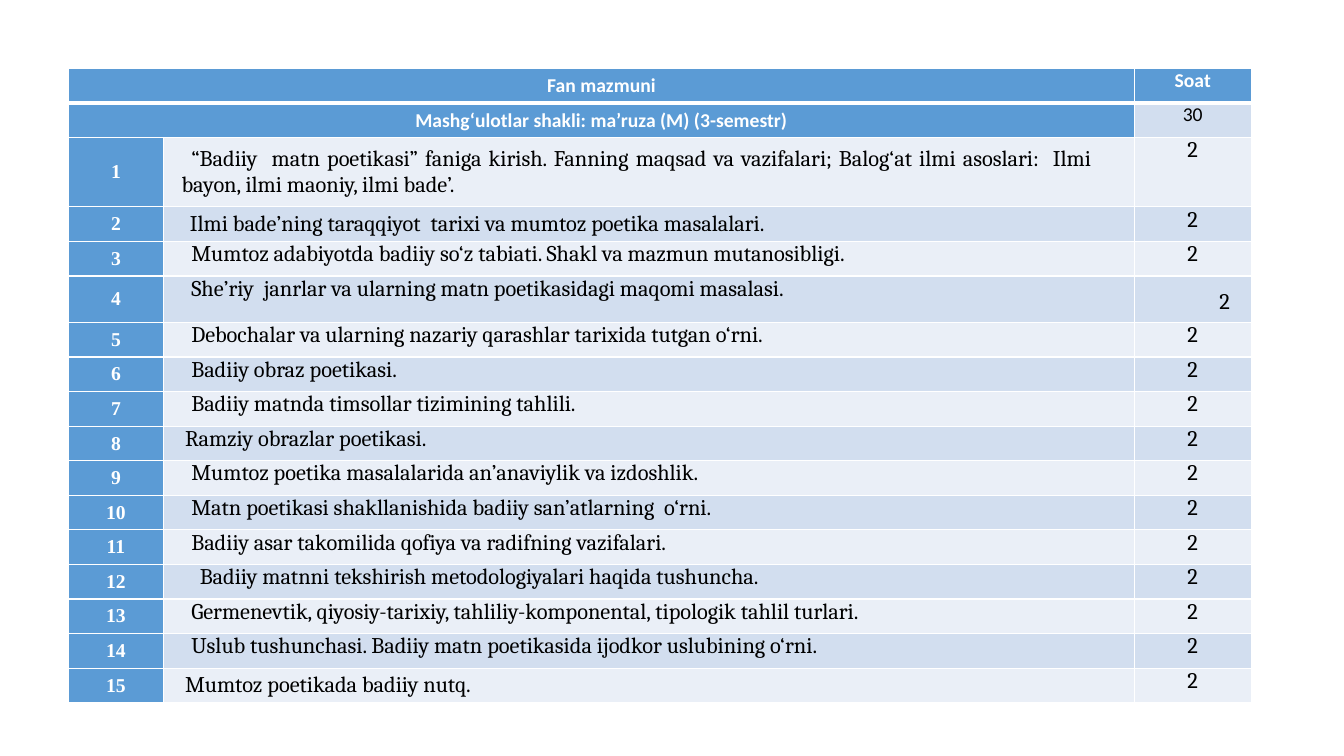
from dataclasses import dataclass

from lxml import etree
from pptx import Presentation
from pptx.dml.color import RGBColor
from pptx.enum.text import MSO_ANCHOR, PP_ALIGN
from pptx.oxml.ns import qn
from pptx.util import Pt

LEFT, CENTER, JUSTIFY = PP_ALIGN.LEFT, PP_ALIGN.CENTER, PP_ALIGN.JUSTIFY
TOP, MIDDLE = MSO_ANCHOR.TOP, MSO_ANCHOR.MIDDLE


@dataclass(frozen=True)
class Theme:
    accent: str = "5B9BD5"
    band_dark: str = "D2DEEF"
    band_light: str = "EAEFF7"
    white: str = "FFFFFF"
    black: str = "000000"
    heading_font: str = "Calibri"
    number_font: str = "Times New Roman"
    body_font: str = "Cambria"
    small: int = 14
    large: int = 16


THEME = Theme()
COLUMN_WIDTHS = (67.7, 693.6, 83.4)
ROW_HEIGHT = 24.7
TALL_ROWS = {1: 49.4, 4: 33.2}
HEADING_ROWS = 2
HANGING = (8, 7)
LECTURES = (
    ("“Badiiy  matn poetikasi” faniga kirish. Fanning maqsad va vazifalari; "
     "Balog‘at ilmi asoslari:  Ilmi  bayon, ilmi maoniy, ilmi bade’.", HANGING, JUSTIFY, MIDDLE),
    ("Ilmi bade’ning taraqqiyot  tarixi va mumtoz poetika masalalari.", (0, 14), LEFT, MIDDLE),
    ("Mumtoz adabiyotda badiiy so‘z tabiati. Shakl va mazmun mutanosibligi.", HANGING, JUSTIFY, TOP),
    ("She’riy  janrlar va ularning matn poetikasidagi maqomi masalasi.", HANGING, JUSTIFY, TOP),
    ("Debochalar va ularning nazariy qarashlar tarixida tutgan o‘rni.", HANGING, JUSTIFY, TOP),
    ("Badiiy obraz poetikasi.", HANGING, JUSTIFY, TOP),
    ("Badiiy matnda timsollar tizimining tahlili.", HANGING, JUSTIFY, TOP),
    ("Ramziy obrazlar poetikasi.", (0, 10.5), JUSTIFY, TOP),
    ("Mumtoz poetika masalalarida an’anaviylik va izdoshlik.", HANGING, JUSTIFY, TOP),
    ("Matn poetikasi shakllanishida badiiy san’atlarning  o‘rni.", HANGING, JUSTIFY, TOP),
    ("Badiiy asar takomilida qofiya va radifning vazifalari.", HANGING, JUSTIFY, TOP),
    ("Badiiy matnni tekshirish metodologiyalari haqida tushuncha.", (0, 21), LEFT, TOP),
    ("Germenevtik, qiyosiy-tarixiy, tahliliy-komponental, tipologik tahlil turlari.",
     HANGING, JUSTIFY, TOP),
    ("Uslub tushunchasi. Badiiy matn poetikasida ijodkor uslubining o‘rni.", HANGING, JUSTIFY, TOP),
    ("Mumtoz poetikada badiiy nutq.", (0, 10.5), LEFT, MIDDLE),
)


def add_borders(cell, bottom=1):
    properties = cell._tc.get_or_add_tcPr()
    for side, width in (("L", 1), ("R", 1), ("T", 1), ("B", bottom)):
        line = etree.SubElement(properties, qn(f"a:ln{side}"), w=str(Pt(width)))
        fill = etree.SubElement(line, qn("a:solidFill"))
        etree.SubElement(fill, qn("a:srgbClr"), val=THEME.white)


def set_indent(paragraph, left, first, right=0):
    properties = paragraph._p.get_or_add_pPr()
    for name, length in (("marL", left), ("marR", right), ("indent", first)):
        properties.set(name, str(Pt(length)))


def style_cell(cell, fill, bottom=1):
    add_borders(cell, bottom)
    cell.fill.solid()
    cell.fill.fore_color.rgb = RGBColor.from_string(fill)
    cell.margin_left = cell.margin_right = Pt(5)
    cell.margin_top = cell.margin_bottom = Pt(0)


def write_cell(cell, text, font, size, color, bold=False, align=CENTER, anchor=TOP):
    cell.vertical_anchor = anchor
    paragraph = cell.text_frame.paragraphs[0]
    paragraph.text = text
    paragraph.alignment = align
    paragraph.font.name = font
    paragraph.font.size = Pt(size)
    paragraph.font.bold = bold
    paragraph.font.color.rgb = RGBColor.from_string(color)
    return paragraph


def write_heading(cell, text, anchor=MIDDLE):
    write_cell(cell, text, THEME.heading_font, THEME.small, THEME.white, True, anchor=anchor)


def add_headings(table):
    for row, bottom, hours_fill in ((0, 3, THEME.accent), (1, 1, THEME.band_dark)):
        for column, fill in enumerate((THEME.accent, THEME.accent, hours_fill)):
            style_cell(table.cell(row, column), fill, bottom)
        table.cell(row, 0).merge(table.cell(row, 1))
    write_heading(table.cell(0, 0), "Fan mazmuni")
    write_heading(table.cell(0, 2), "Soat", TOP)
    write_heading(table.cell(1, 0), "Mashg‘ulotlar shakli: ma’ruza (M) (3-semestr)")
    write_cell(table.cell(1, 2), "30", THEME.heading_font, THEME.small, THEME.black)


def add_lecture(table, number, topic, indent, align, anchor):
    row = number + HEADING_ROWS - 1
    band = THEME.band_light if number % 2 else THEME.band_dark
    number_cell, topic_cell, hours_cell = (table.cell(row, column) for column in range(3))
    for cell, fill in ((number_cell, THEME.accent), (topic_cell, band), (hours_cell, band)):
        style_cell(cell, fill)
    write_cell(number_cell, str(number), THEME.number_font, THEME.small, THEME.white, True,
               anchor=MIDDLE)
    topic_line = write_cell(topic_cell, topic, THEME.body_font, THEME.large, THEME.black,
                            align=align, anchor=anchor)
    set_indent(topic_line, *indent, right=20)
    return write_cell(hours_cell, "2", THEME.body_font, THEME.large, THEME.black)


def add_course_table(slide):
    heights = [ROW_HEIGHT] * HEADING_ROWS
    heights += [TALL_ROWS.get(number, ROW_HEIGHT) for number in range(1, len(LECTURES) + 1)]
    table = slide.shapes.add_table(len(heights), len(COLUMN_WIDTHS), Pt(49), Pt(49),
                                   Pt(sum(COLUMN_WIDTHS)), Pt(sum(heights))).table
    for column, width in zip(table.columns, COLUMN_WIDTHS):
        column.width = Pt(width)
    for row, height in zip(table.rows, heights):
        row.height = Pt(height)
    add_headings(table)
    for number, lecture in enumerate(LECTURES, 1):
        hours = add_lecture(table, number, *lecture)
        if number == 4:
            set_indent(hours, 0, 45.4)
            hours.line_spacing = 1.5


def main():
    deck = Presentation()
    deck.slide_width, deck.slide_height = Pt(960), Pt(540)
    slide = deck.slides.add_slide(deck.slide_layouts[6])
    add_course_table(slide)
    deck.save("out.pptx")


if __name__ == "__main__":
    main()
